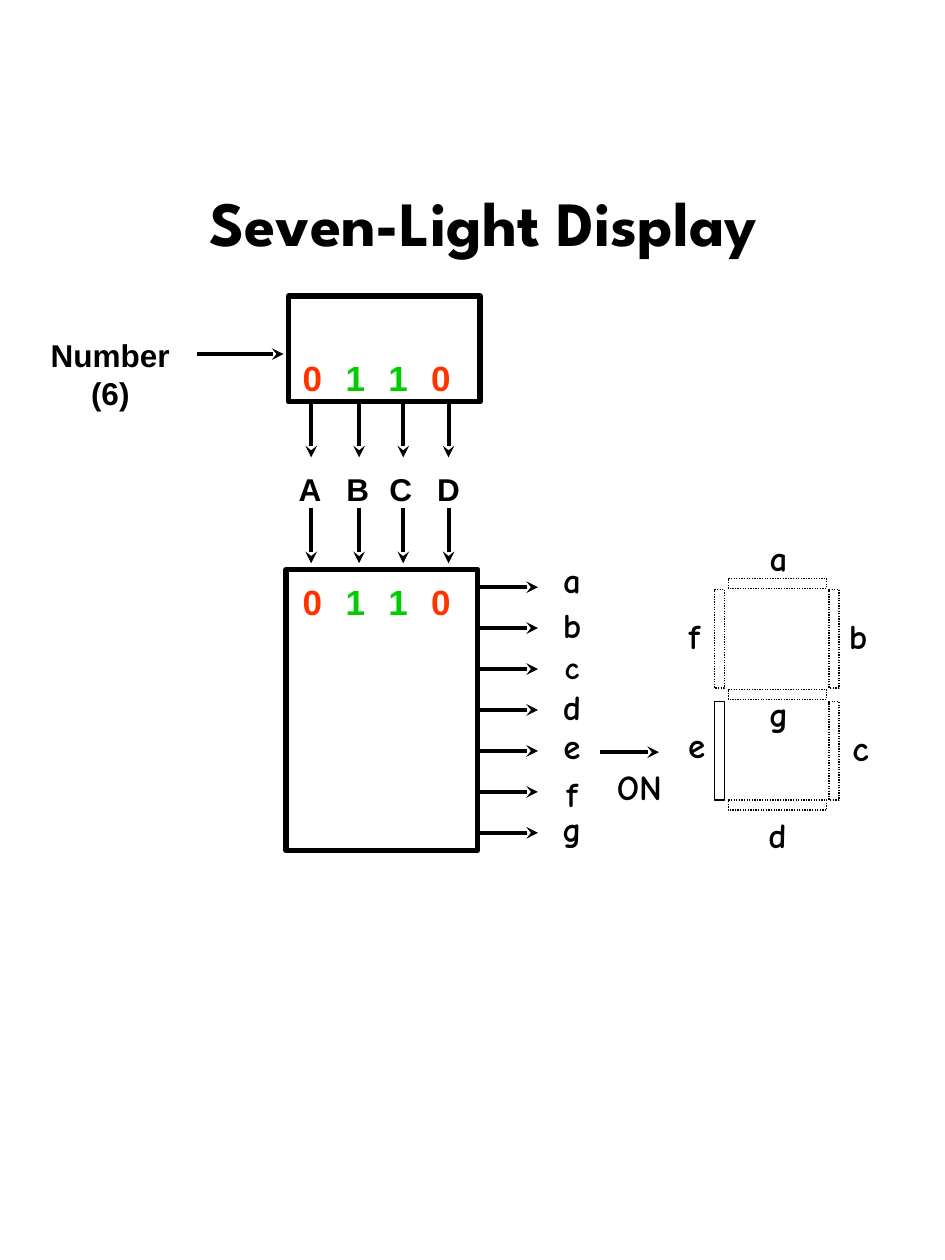
from pptx import Presentation
from pptx.dml.color import RGBColor
from pptx.enum.dml import MSO_LINE
from pptx.enum.shapes import MSO_CONNECTOR, MSO_SHAPE
from pptx.enum.text import MSO_AUTO_SIZE, PP_ALIGN
from pptx.oxml.ns import qn
from pptx.util import Inches, Pt
from lxml import etree

RECTANGLE = MSO_SHAPE.RECTANGLE
STRAIGHT = MSO_CONNECTOR.STRAIGHT
DOTTED = MSO_LINE.ROUND_DOT
CENTER = PP_ALIGN.CENTER
FIT_SHAPE = MSO_AUTO_SIZE.SHAPE_TO_FIT_TEXT

BLACK = "000000"
BIT_COLORS = {"0": "FF3300", "1": "00CC00"}
TITLE_FONT = "League Spartan"
LABEL_FONT = "Arial"
SEGMENT_FONT = "Comic Neue"


def color(value):
    return RGBColor.from_string(value)


class Diagram:
    """Draws the elements of a logic diagram on one slide."""

    def __init__(self, slide):
        self.slide = slide

    def text(self, content, left, top, width, height, font, size=20, fill=BLACK, wrap=False):
        shape = self.slide.shapes.add_textbox(
            Inches(left), Inches(top), Inches(width), Inches(height))
        frame = shape.text_frame
        frame.text = content
        frame.word_wrap = wrap
        frame.auto_size = FIT_SHAPE
        for paragraph in frame.paragraphs:
            paragraph.alignment = CENTER
            for run in paragraph.runs:
                run.font.name = font
                run.font.size = Pt(size)
                run.font.bold = True
                run.font.color.rgb = color(fill)

    def box(self, left, top, width, height, weight=3, dash=None, rotation=0):
        shape = self.slide.shapes.add_shape(
            RECTANGLE, Inches(left), Inches(top), Inches(width), Inches(height))
        shape.shadow.inherit = False
        shape.fill.background()
        shape.line.color.rgb = color(BLACK)
        shape.line.width = Pt(weight)
        if dash is not None:
            shape.line.dash_style = dash
        shape.rotation = rotation

    def arrow(self, x, y, right=0, down=0):
        connector = self.slide.shapes.add_connector(
            STRAIGHT, Inches(x), Inches(y), Inches(x + right), Inches(y + down))
        connector.line.color.rgb = color(BLACK)
        connector.line.width = Pt(2.25)
        line = connector.line._get_or_add_ln()
        etree.SubElement(line, qn("a:tailEnd"), type="stealth")
        etree.SubElement(connector._element.spPr, qn("a:effectLst"))

    def bits(self, number, top):
        for index, bit in enumerate(number):
            self.text(bit, 2.3 + 0.34 * index, top, 0.36, 0.43, LABEL_FONT,
                      fill=BIT_COLORS[bit])


def main():
    presentation = Presentation()
    presentation.slide_width = Inches(7.5)
    presentation.slide_height = Inches(10)
    slide = presentation.slides.add_slide(presentation.slide_layouts[6])
    diagram = Diagram(slide)

    diagram.text("Seven-Light Display", 1.21, 1.41, 5.25, 0.7, TITLE_FONT, 36, wrap=True)
    diagram.text("Number\n(6)", 0.3, 2.62, 1.15, 0.7, LABEL_FONT, 18)
    diagram.arrow(1.56, 2.81, right=0.69)

    diagram.box(2.29, 2.35, 1.52, 0.84)
    diagram.box(2.27, 4.52, 1.52, 2.23)
    for top in (2.78, 4.56):
        diagram.bits("0110", top)

    inputs = [("A", 2.27, 2.47), ("B", 2.65, 2.85), ("C", 2.99, 3.2), ("D", 3.37, 3.56)]
    for letter, left, arrow_x in inputs:
        diagram.text(letter, left, 3.68, 0.38, 0.4, LABEL_FONT, 18)
        for arrow_y in (3.19, 4.03):
            diagram.arrow(arrow_x, arrow_y, down=0.44)

    output_tops = [4.38, 4.74, 5.09, 5.39, 5.7, 6.08, 6.36]
    for index, (letter, top) in enumerate(zip("abcdefg", output_tops)):
        diagram.arrow(3.8, 4.66 + 0.325 * index, right=0.47)
        size = 18 if letter == "c" else 20
        diagram.text(letter, 4.36, top, 0.36, 0.43, SEGMENT_FONT, size)

    diagram.arrow(4.76, 5.97, right=0.47)
    diagram.text("ON", 4.75, 6.03, 0.65, 0.43, SEGMENT_FONT)

    segments = [
        ("a", 5.78, 4.59, 0, 6, 4.21),
        ("b", 6.23, 5.03, 90, 6.63, 4.83),
        ("c", 6.23, 5.92, 90, 6.65, 5.72),
        ("d", 5.78, 6.35, 0, 5.99, 6.41),
        ("e", 5.32, 5.92, 90, 5.35, 5.69),
        ("f", 5.32, 5.03, 90, 5.33, 4.83),
        ("g", 5.78, 5.47, 0, 6, 5.45),
    ]
    for letter, left, top, rotation, label_left, label_top in segments:
        dash = None if letter == "e" else DOTTED
        diagram.box(left, top, 0.78, 0.08, 0.75, dash, rotation)
        diagram.text(letter, label_left, label_top, 0.36, 0.43, SEGMENT_FONT)

    presentation.save("out.pptx")


if __name__ == "__main__":
    main()
